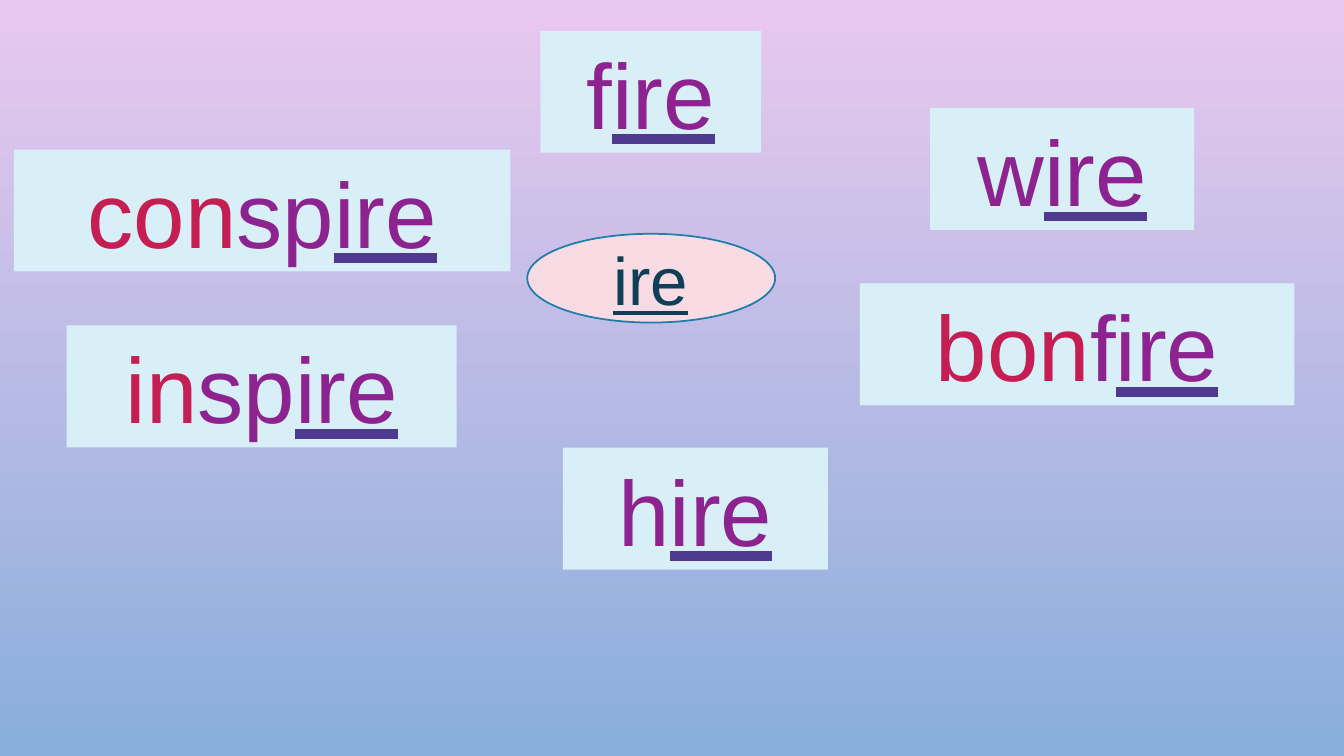
from lxml import etree
from pptx import Presentation
from pptx.dml.color import RGBColor
from pptx.enum.shapes import MSO_SHAPE
from pptx.enum.text import MSO_ANCHOR, MSO_UNDERLINE, PP_ALIGN
from pptx.oxml.ns import qn
from pptx.util import Pt

RECTANGLE, OVAL = MSO_SHAPE.RECTANGLE, MSO_SHAPE.OVAL
BOTTOM = MSO_ANCHOR.BOTTOM
CENTER = PP_ALIGN.CENTER
HEAVY = MSO_UNDERLINE.HEAVY_LINE

COLORS = {
    "sky_top": "E9C8EF",
    "sky_bottom": "89AEDB",
    "card": "D9EFF7",
    "oval": "F9DBE4",
    "oval_line": "1D7EAB",
    "ending": "0F3F56",
    "prefix": "C41E52",
    "stem": "8C2390",
    "underline": "4F3A90",
}
ENDING = "ire"
CARD_HEIGHT = 87.1
WORDS = [
    ("bon", "f", 614.2, 202.4, 310.3),
    ("in", "sp", 47.7, 232.4, 278.6),
    ("", "w", 664.4, 77.2, 188.6),
    ("", "h", 402, 319.8, 189.4),
    ("", "f", 386, 22, 157.7),
    ("con", "sp", 9.9, 106.8, 354.7),
]


class WordSlide:
    """Draws word cards that share one spelling ending."""

    def __init__(self, slide):
        self.slide = slide
        self.font = "Arial"

    def color(self, name):
        return RGBColor.from_string(COLORS[name])

    def background(self, top, bottom):
        fill = self.slide.background.fill
        fill.gradient()
        fill.gradient_angle = 270
        for stop, name, position in zip(fill.gradient_stops, (top, bottom), (0, 1)):
            stop.color.rgb = self.color(name)
            stop.position = position

    def shape(self, shapes, kind, left, top, width, height, fill):
        shape = shapes.add_shape(kind, Pt(left), Pt(top), Pt(width), Pt(height))
        shape.shadow.inherit = False
        shape.fill.solid()
        shape.fill.fore_color.rgb = self.color(fill)
        shape.line.fill.background()
        return shape

    def paragraph(self, shape, size):
        frame = shape.text_frame
        frame.word_wrap = True
        frame.vertical_anchor = BOTTOM
        paragraph = frame.paragraphs[0]
        paragraph.alignment = CENTER
        paragraph.font.size = Pt(size)
        paragraph.font.name = self.font
        return paragraph

    def run(self, paragraph, text, color):
        run = paragraph.add_run()
        run.text = text
        run.font.size = paragraph.font.size
        run.font.name = self.font
        run.font.color.rgb = self.color(color)
        return run

    def heavy_underline(self, run, color):
        run.font.underline = HEAVY
        latin = run.font._element.find(qn("a:latin"))
        underline_fill = etree.Element(qn("a:uFill"))
        solid = etree.SubElement(underline_fill, qn("a:solidFill"))
        etree.SubElement(solid, qn("a:srgbClr"), val=COLORS[color])
        latin.addprevious(underline_fill)

    def ending_oval(self):
        group = self.slide.shapes.add_group_shape()
        oval = self.shape(group.shapes, OVAL, 376.6, 167, 177.1, 63.4, "oval")
        oval.line.color.rgb = self.color("oval_line")
        oval.line.width = Pt(1.25)
        label = group.shapes.add_textbox(Pt(367.2), Pt(167), Pt(195.1), Pt(64.5))
        paragraph = self.paragraph(label, 48)
        paragraph.font.underline = True
        self.run(paragraph, ENDING, "ending").font.underline = True

    def word_card(self, prefix, stem, left, top, width):
        card = self.shape(self.slide.shapes, RECTANGLE, left, top, width, CARD_HEIGHT, "card")
        paragraph = self.paragraph(card, 66)
        if prefix:
            self.run(paragraph, prefix, "prefix")
        self.run(paragraph, stem, "stem")
        self.heavy_underline(self.run(paragraph, ENDING, "stem"), "underline")


def main():
    presentation = Presentation()
    presentation.slide_width, presentation.slide_height = Pt(960), Pt(540)
    slide = presentation.slides.add_slide(presentation.slide_layouts[6])
    word_slide = WordSlide(slide)
    word_slide.background("sky_top", "sky_bottom")
    word_slide.ending_oval()
    for word in WORDS:
        word_slide.word_card(*word)
    presentation.save("out.pptx")


if __name__ == "__main__":
    main()
